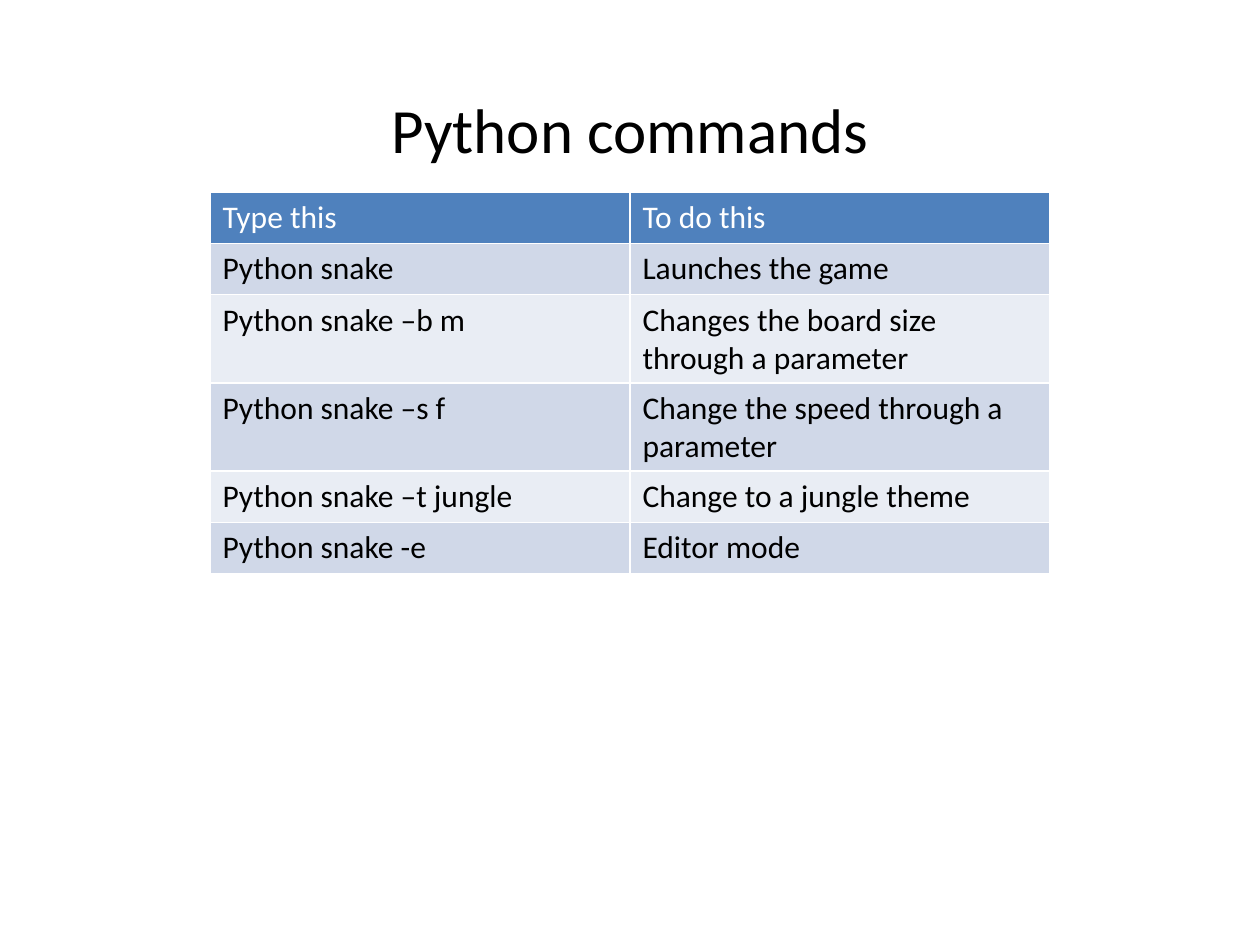
"""Build a slide with a table of Python commands."""
from lxml import etree
from pptx import Presentation
from pptx import util as u
from pptx.dml.color import RGBColor
from pptx.enum import text
from pptx.oxml.ns import qn

BLACK = RGBColor(0x00, 0x00, 0x00)
WHITE = RGBColor(0xFF, 0xFF, 0xFF)
HEADER = RGBColor(0x4F, 0x81, 0xBD)
BANDS = (RGBColor(0xE9, 0xED, 0xF4), RGBColor(0xD0, 0xD8, 0xE8))

COMMANDS = [
    ("Type this", "To do this"),
    ("Python snake", "Launches the game"),
    ("Python snake –b m", "Changes the board size through a parameter"),
    ("Python snake –s f", "Change the speed through a parameter"),
    ("Python snake –t jungle", "Change to a jungle theme"),
    ("Python snake -e", "Editor mode"),
]


def write(tf, words, size, color, align=text.PP_ALIGN.LEFT):
    p = tf.paragraphs[0]
    p.alignment = align
    r = p.add_run()
    r.text = words
    formats = {"name": "Calibri", "size": u.Pt(size), "bold": False}
    for key, value in formats.items():
        setattr(r.font, key, value)
    r.font.color.rgb = color


def add_title(s, words):
    sp = s.shapes.add_textbox(u.Pt(0), u.Pt(24), u.Pt(720), u.Pt(98.5))
    tf = sp.text_frame
    formats = {"word_wrap": True, "vertical_anchor": text.MSO_ANCHOR.MIDDLE}
    for key, value in formats.items():
        setattr(tf, key, value)
    write(tf, words, 36, BLACK, text.PP_ALIGN.CENTER)


def add_borders(cell, color, width):
    tc_pr = cell._tc.get_or_add_tcPr()
    for side in ("lnL", "lnR", "lnT", "lnB"):
        ln = etree.SubElement(tc_pr, qn(f"a:{side}"), w=str(u.Pt(width)))
        fill = etree.SubElement(ln, qn("a:solidFill"))
        etree.SubElement(fill, qn("a:srgbClr"), val=str(color))


def add_command_table(s, rows):
    row_height = u.Pt(29.2)
    table = s.shapes.add_table(len(rows), len(rows[0]), u.Pt(120), u.Pt(110),
                               u.Pt(480), row_height * len(rows)).table
    for i, row in enumerate(rows):
        table.rows[i].height = row_height
        for j, words in enumerate(row):
            cell = table.cell(i, j)
            add_borders(cell, WHITE, 1)
            cell.fill.solid()
            cell.fill.fore_color.rgb = BANDS[i % 2] if i else HEADER
            write(cell.text_frame, words, 18, BLACK if i else WHITE)


def main():
    prs = Presentation()
    prs.slide_width, prs.slide_height = u.Pt(720), u.Pt(540)
    s = prs.slides.add_slide(prs.slide_layouts[6])
    add_title(s, "Python commands")
    add_command_table(s, COMMANDS)
    prs.save("out.pptx")


if __name__ == "__main__":
    main()
